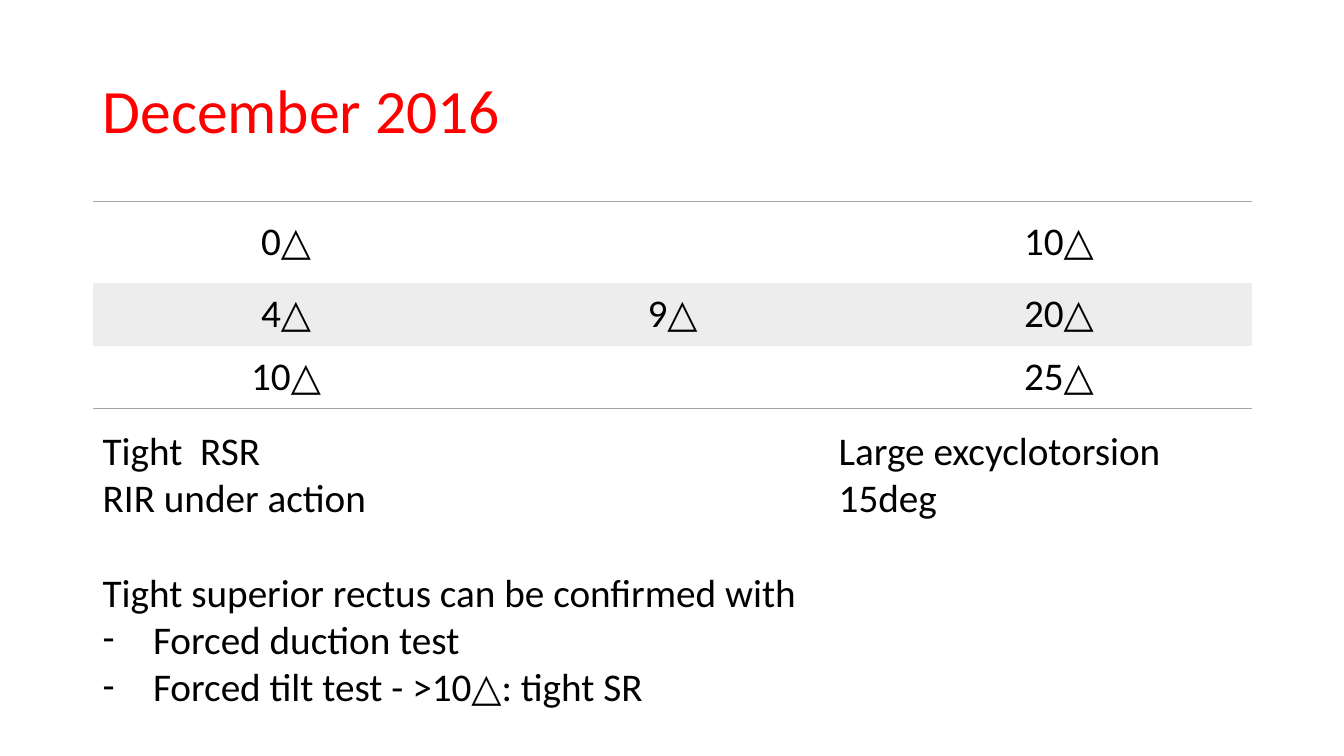
import pptx
import pptx.util
import pptx.dml.color
import pptx.enum.text
from pptx.oxml import parse_xml
from pptx.oxml.ns import nsdecls
from pptx.util import Inches

FONT = "Calibri"
BLACK = "000000"
RED = "FF0000"
GREY = "A5A5A5"
BAND = "EDEDED"
PLAIN = "{2D5ABB26-0587-4C30-8999-92F81FD0307C}"
LEFT = 0.92
WIDTH = 11.5
GRID = [
    ["0△", "", "10△"],
    ["4△", "9△", "20△"],
    ["10△", "", "25△"],
]
HEIGHTS = [0.81, 0.62, 0.62]
EDGES = ["TB", "", "B"]


def color(code):
    return pptx.dml.color.RGBColor.from_string(code)


def add_run(para, text, size=28, code=BLACK):
    run = para.add_run()
    run.text = text
    run.font.size = pptx.util.Pt(size)
    run.font.name = FONT
    run.font.color.rgb = color(code)


def add_box(slide, left, top, width, height):
    box = slide.shapes.add_textbox(
        Inches(left), Inches(top), Inches(width), Inches(height))
    box.text_frame.word_wrap = True
    return box.text_frame


def add_title(slide, text):
    frame = add_box(slide, LEFT, 0.4, WIDTH, 1.45)
    frame.vertical_anchor = pptx.enum.text.MSO_ANCHOR.MIDDLE
    para = frame.paragraphs[0]
    para.line_spacing = 0.9
    add_run(para, text, 44, RED)


def set_edges(cell, edges):
    """Draw a grey line on each side named in edges, none on the others."""
    props = cell._tc.get_or_add_tcPr()
    for spot, side in enumerate("LRTB"):
        if side in edges:
            fill = f'<a:solidFill><a:srgbClr val="{GREY}"/></a:solidFill>'
        else:
            fill = "<a:noFill/>"
        line = f'<a:ln{side} {nsdecls("a")} w="12700">{fill}</a:ln{side}>'
        props.insert(spot, parse_xml(line))


def add_grid(slide):
    frame = slide.shapes.add_table(
        len(GRID), len(GRID[0]), Inches(LEFT), Inches(2),
        Inches(WIDTH), Inches(sum(HEIGHTS)))
    table = frame.table
    table.first_row = False
    table.horz_banding = False
    table._tbl.tblPr.find(pptx.oxml.ns.qn("a:tableStyleId")).text = PLAIN
    for r, texts in enumerate(GRID):
        table.rows[r].height = Inches(HEIGHTS[r])
        for c, text in enumerate(texts):
            cell = table.cell(r, c)
            cell.vertical_anchor = pptx.enum.text.MSO_ANCHOR.MIDDLE
            if r == 1:
                cell.fill.solid()
                cell.fill.fore_color.rgb = color(BAND)
            else:
                cell.fill.background()
            set_edges(cell, EDGES[r])
            para = cell.text_frame.paragraphs[0]
            para.alignment = pptx.enum.text.PP_ALIGN.CENTER
            if text:
                add_run(para, text)


def set_dash(para):
    props = para._p.get_or_add_pPr()
    props.set("marL", str(Inches(0.5)))
    props.set("indent", str(-Inches(0.5)))
    props.append(parse_xml(f'<a:buFont {nsdecls("a")} typeface="{FONT}"/>'))
    props.append(parse_xml(f'<a:buChar {nsdecls("a")} char="-"/>'))


def add_notes(slide, place, lines, lead=None, dashed=()):
    """Write one paragraph a line, with a gap above the line called lead."""
    frame = add_box(slide, *place)
    for i, text in enumerate(lines):
        para = frame.add_paragraph() if i else frame.paragraphs[0]
        if text == lead:
            para.space_before = pptx.util.Pt(34)
        if text in dashed:
            set_dash(para)
        add_run(para, text)


def main():
    deck = pptx.Presentation()
    deck.slide_width = Inches(13.33)
    deck.slide_height = Inches(7.5)
    slide = deck.slides.add_slide(deck.slide_layouts[6])
    add_title(slide, "December 2016")
    add_grid(slide)
    signs = ["Tight  RSR", "RIR under action"]
    lead = "Tight superior rectus can be confirmed with"
    tests = ["Forced duction test", "Forced tilt test - >10△: tight SR"]
    add_notes(slide, (LEFT, 4.18, 7.3, 3.4), signs + [lead] + tests,
              lead, tests)
    add_notes(slide, (8.22, 4.18, 4.41, 1.04), ["Large excyclotorsion 15deg"])
    deck.save("out.pptx")


if __name__ == "__main__":
    main()
